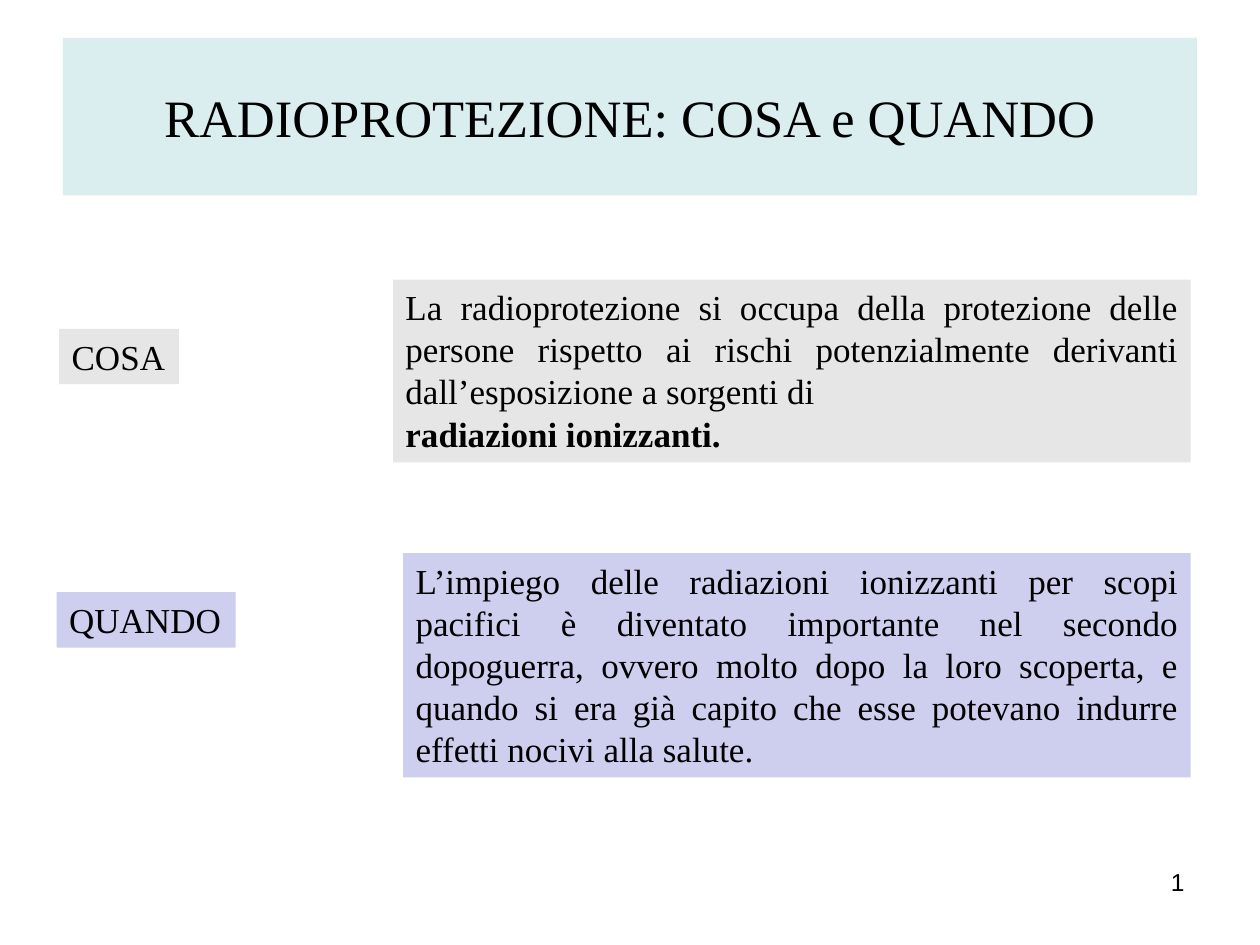
import pptx
import pptx.dml.color
import pptx.enum.text
import pptx.util

Inches = pptx.util.Inches
Align = pptx.enum.text.PP_ALIGN
Anchor = pptx.enum.text.MSO_ANCHOR

COLORS = {"text": "000000", "title": "DAEDEF", "what": "E6E6E6", "when": "CECEEF"}


class SlideBuilder:
    """Holds the style and the current slide, and adds its elements."""

    serif = "Times New Roman"
    sans = "Arial"

    def __init__(self, page):
        self.page = page

    def color(self, name):
        return pptx.dml.color.RGBColor.from_string(COLORS[name])

    def text(self, place, paragraphs, align=Align.LEFT, size=20, font=None,
             anchor=Anchor.TOP, wrap=True):
        box = self.page.shapes.add_textbox(*map(Inches, place))
        frame = box.text_frame
        frame.word_wrap = wrap
        frame.vertical_anchor = anchor
        for index, (words, bold) in enumerate(paragraphs):
            para = frame.paragraphs[0] if index == 0 else frame.add_paragraph()
            para.alignment = align
            span = para.add_run()
            span.text = words
            span.font.name = font or self.serif
            span.font.size = pptx.util.Pt(size)
            span.font.bold = bold
            span.font.color.rgb = self.color("text")
        return box

    def panel(self, place, paragraphs, fill, **style):
        box = self.text(place, paragraphs, **style)
        box.fill.solid()
        box.fill.fore_color.rgb = self.color(fill)

    def title(self, words):
        self.panel((0.5, 0.3, 9, 1.25), [(words, False)], "title",
                   align=Align.CENTER, size=30, anchor=Anchor.MIDDLE)

    def label(self, place, words, fill):
        self.panel(place, [(words, False)], fill, wrap=False)

    def explanation(self, place, paragraphs, fill):
        self.panel(place, paragraphs, fill, align=Align.JUSTIFY)

    def page_number(self, number):
        self.text((7.17, 6.83, 2.33, 0.52), [(number, False)],
                  align=Align.RIGHT, size=14, font=self.sans)


def main():
    deck = pptx.Presentation()
    deck.slide_width, deck.slide_height = Inches(10), Inches(7.5)
    builder = SlideBuilder(deck.slides.add_slide(deck.slide_layouts[6]))
    builder.title("RADIOPROTEZIONE: COSA e QUANDO")
    builder.page_number("1")
    builder.label((0.47, 2.61, 0.95, 0.44), "COSA", "what")
    builder.explanation((3.12, 2.22, 6.33, 1.45), [
        ("La radioprotezione si occupa della protezione delle persone rispetto "
         "ai rischi potenzialmente derivanti dall’esposizione a sorgenti di", False),
        ("radiazioni ionizzanti.", True),
    ], "what")
    builder.label((0.45, 4.7, 1.42, 0.44), "QUANDO", "when")
    builder.explanation((3.2, 4.39, 6.25, 1.78), [
        ("L’impiego delle radiazioni ionizzanti per scopi pacifici è diventato "
         "importante nel secondo dopoguerra, ovvero molto dopo la loro scoperta, "
         "e quando si era già capito che esse potevano indurre effetti nocivi "
         "alla salute.", False),
    ], "when")
    deck.save("out.pptx")


if __name__ == "__main__":
    main()
